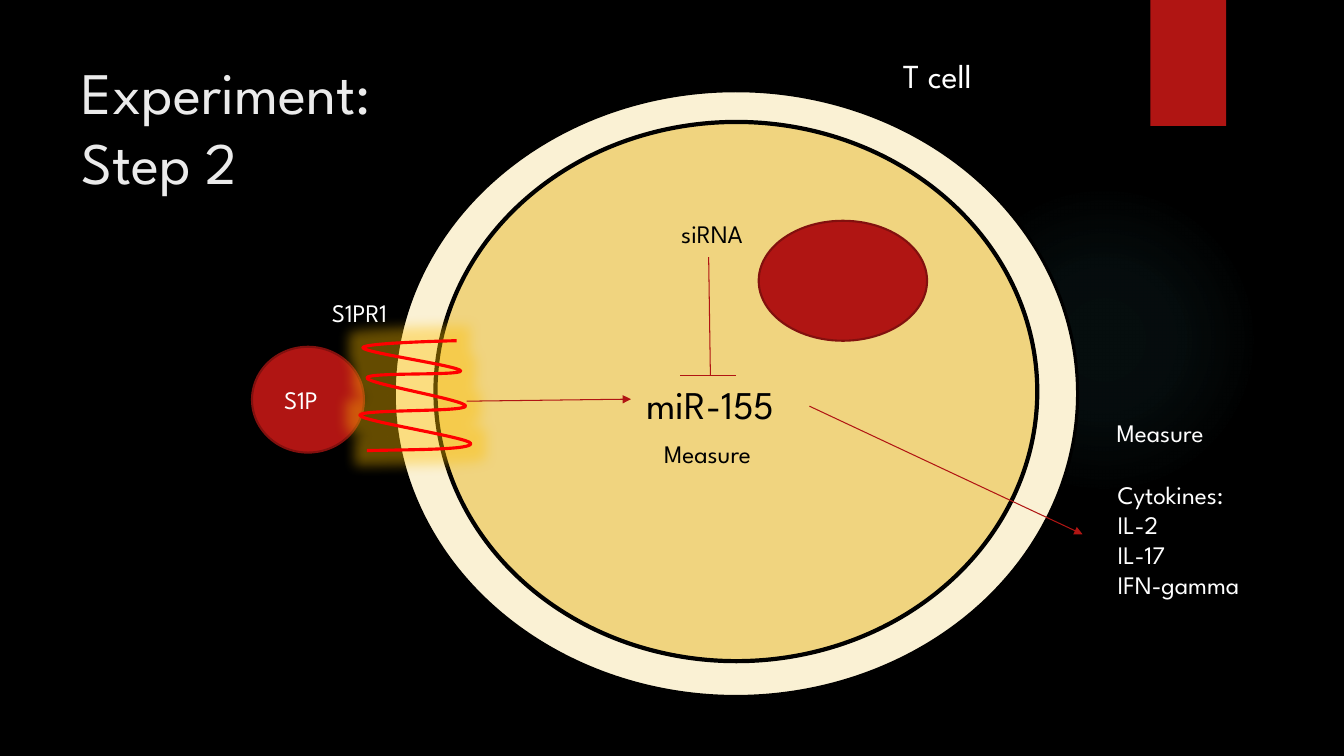
from lxml import etree
from pptx import Presentation, util as u
from pptx.dml.color import RGBColor
from pptx.enum import shapes as kinds, text as txt
from pptx.oxml import parse_xml
from pptx.oxml.ns import nsdecls, qn

# Grid: 100 columns by 100 rows over the slide
WIDTH, HEIGHT = u.Pt(960), u.Pt(540)
FONT = "League Spartan"

BLACK = RGBColor(0x00, 0x00, 0x00)
WHITE = RGBColor(0xFF, 0xFF, 0xFF)
TITLE_GREY = RGBColor(0xEB, 0xEB, 0xEB)
CREAM = RGBColor(0xFA, 0xF1, 0xD4)
SAND = RGBColor(0xF0, 0xD4, 0x7F)
RED = RGBColor(0xB0, 0x15, 0x13)
DARK_RED = RGBColor(0x82, 0x10, 0x0E)
BRIGHT_RED = RGBColor(0xFF, 0x00, 0x00)
TEAL = RGBColor(0x50, 0xB9, 0xC1)
GOLD = RGBColor(0xFF, 0xC0, 0x00)

# Receptor coil: a start point, then cubic curves (two handles and an end)
COIL_START = (27.3, 59.6)
COIL_CURVES = [
    ((31.2, 59.47), (35.1, 59.47), (35.03, 58.67)),
    ((34.95, 57.87), (26.85, 55.73), (26.78, 54.93)),
    ((26.7, 54.13), (34.58, 54.53), (34.65, 53.73)),
    ((34.73, 52.93), (27.38, 50.8), (27.3, 50)),
    ((27.23, 49.2), (34.28, 49.73), (34.28, 49.07)),
    ((34.2, 48.4), (27.08, 46.67), (27, 46)),
    ((27, 45.33), (33.98, 45.07), (33.98, 45.07)),
]


def col(share):
    return round(WIDTH * share / 100)


def row(share):
    return round(HEIGHT * share / 100)


def place(left, top, width, height):
    return col(left), row(top), col(width), row(height)


def add_body(parent, preset, box, fill, line=None, weight=1.5):
    body = parent.add_shape(preset, *place(*box))
    body.shadow.inherit = False
    body.fill.solid()
    body.fill.fore_color.rgb = fill
    if line is None:
        body.line.fill.background()
    else:
        body.line.color.rgb = line
        body.line.width = u.Pt(weight)
    return body


def add_oval(parent, box, fill, line=None, weight=1.5):
    return add_body(parent, kinds.MSO_SHAPE.OVAL, box, fill, line, weight)


def style_run(run, size, color):
    run.font.name = FONT
    run.font.size = u.Pt(size)
    run.font.color.rgb = color


def add_label(parent, box, lines, color, size=18):
    frame = parent.add_textbox(*place(*box)).text_frame
    frame.word_wrap = True
    for i, line in enumerate(lines):
        paragraph = frame.add_paragraph() if i else frame.paragraphs[0]
        run = paragraph.add_run()
        run.text = line
        style_run(run, size, color)


def add_signal(parent, start, end, arrow=True):
    signal = parent.add_connector(
        kinds.MSO_CONNECTOR.STRAIGHT,
        col(start[0]), row(start[1]), col(end[0]), row(end[1]))
    signal.line.color.rgb = RED
    signal.line.width = u.Pt(0.75)
    if arrow:
        etree.SubElement(signal.line._get_or_add_ln(), qn("a:tailEnd"), type="triangle")
    etree.SubElement(signal._element.spPr, qn("a:effectLst"))


def add_halo(parent, box):
    """Faint round light that fades towards its rim."""
    halo = add_oval(parent, box, TEAL)
    stops = "".join(
        f'<a:gs pos="{pos}000"><a:srgbClr val="{TEAL}"><a:alpha val="{alpha}000"/></a:srgbClr></a:gs>'
        for pos, alpha in ((0, 7), (36, 6), (69, 0)))
    gradient = parse_xml(
        f'<a:gradFill {nsdecls("a")}><a:gsLst>{stops}</a:gsLst><a:path path="circle">'
        '<a:fillToRect l="50000" t="50000" r="50000" b="50000"/></a:path></a:gradFill>')
    properties = halo._element.spPr
    properties.replace(properties.find(qn("a:solidFill")), gradient)


def add_receptor(parent):
    builder = parent.build_freeform(col(COIL_START[0]), row(COIL_START[1]))
    builder.add_line_segments(
        [(col(x), row(y)) for curve in COIL_CURVES for x, y in curve], close=False)
    receptor = builder.convert_to_shape()
    # Each three straight segments become the points of one cubic curve
    segments = list(receptor._element.iter(qn("a:lnTo")))
    for first in range(0, len(segments), 3):
        curve = etree.Element(qn("a:cubicBezTo"))
        segments[first].addprevious(curve)
        for segment in segments[first:first + 3]:
            curve.append(segment[0])
            segment.getparent().remove(segment)
    receptor.fill.background()
    receptor.line.color.rgb = BRIGHT_RED
    receptor.line.width = u.Pt(2.25)
    receptor._element.spPr.append(parse_xml(
        f'<a:effectLst {nsdecls("a")}><a:glow rad="{u.Pt(18)}"><a:srgbClr val="{GOLD}">'
        '<a:alpha val="40000"/></a:srgbClr></a:glow></a:effectLst>'))


def add_title(slide, box, lines):
    title = slide.shapes.title
    title.left, title.top, title.width, title.height = place(*box)
    frame = title.text_frame
    frame.word_wrap = True
    frame.auto_size = txt.MSO_AUTO_SIZE.NONE
    frame.vertical_anchor = txt.MSO_ANCHOR.TOP
    paragraph = frame.paragraphs[0]
    paragraph.alignment = txt.PP_ALIGN.LEFT
    for i, line in enumerate(lines):
        if i:
            paragraph.add_line_break()
        run = paragraph.add_run()
        run.text = line
        style_run(run, 42, TITLE_GREY)


def main():
    deck = Presentation()
    deck.slide_width, deck.slide_height = WIDTH, HEIGHT
    slide = deck.slides.add_slide(deck.slide_layouts[5])
    slide.background.fill.solid()
    slide.background.fill.fore_color.rgb = BLACK
    canvas = slide.shapes

    # Backdrop and title
    add_halo(canvas, (70.58, 24.4, 23.1, 41.07))
    add_body(canvas, kinds.MSO_SHAPE.RECTANGLE, (85.6, 0, 5.63, 16.67), RED)
    add_title(slide, (5.33, 6.67, 77.18, 20.4), ["Experiment:", "Step 2"])

    # Cell membrane and ligand
    add_oval(canvas, (29.33, 12, 50.85, 80.13), CREAM, BLACK, 2.25)
    ligand = canvas.add_group_shape().shapes
    add_oval(ligand, (18.75, 45.87, 8.33, 14), RED, DARK_RED)
    add_label(ligand, (20.4, 50.13, 5.03, 5.33), ["S1P"], WHITE)

    # Labels outside the cell
    add_label(canvas, (82.43, 62.7, 14.55, 17.47),
              ["Cytokines:", "IL-2", "IL-17", "IFN-gamma"], WHITE)
    add_label(canvas, (82.35, 54.53, 16.35, 5.33), ["Measure"], WHITE)
    add_label(canvas, (66.45, 6.6, 19.5, 6.67), ["T cell"], WHITE, 24)
    add_label(canvas, (23.95, 38.67, 8.33, 5.33), ["S1PR1"], WHITE)

    # Cytoplasm, receptor and signal path
    add_oval(canvas, (32.4, 16.13, 44.78, 71.33), SAND, BLACK, 3)
    add_receptor(canvas)
    add_signal(canvas, (34.73, 53.07), (46.95, 52.8))
    add_label(canvas, (47.35, 49.6, 14.85, 7.6), ["miR-155"], BLACK, 28)
    add_signal(canvas, (60.23, 53.73), (80.55, 70.67))

    # Inhibition by siRNA
    inhibition = canvas.add_group_shape().shapes
    add_signal(inhibition, (52.73, 34), (52.86, 49.65), arrow=False)
    add_signal(inhibition, (50.63, 49.65), (54.75, 49.65), arrow=False)
    add_label(canvas, (49.95, 28.27, 11.63, 5.33), ["siRNA"], BLACK)
    add_label(canvas, (48.68, 57.33, 16.35, 5.33), ["Measure"], BLACK)

    # Nucleus
    add_oval(canvas, (56.45, 29.2, 12.53, 15.87), RED, DARK_RED)

    deck.save("out.pptx")


if __name__ == "__main__":
    main()
